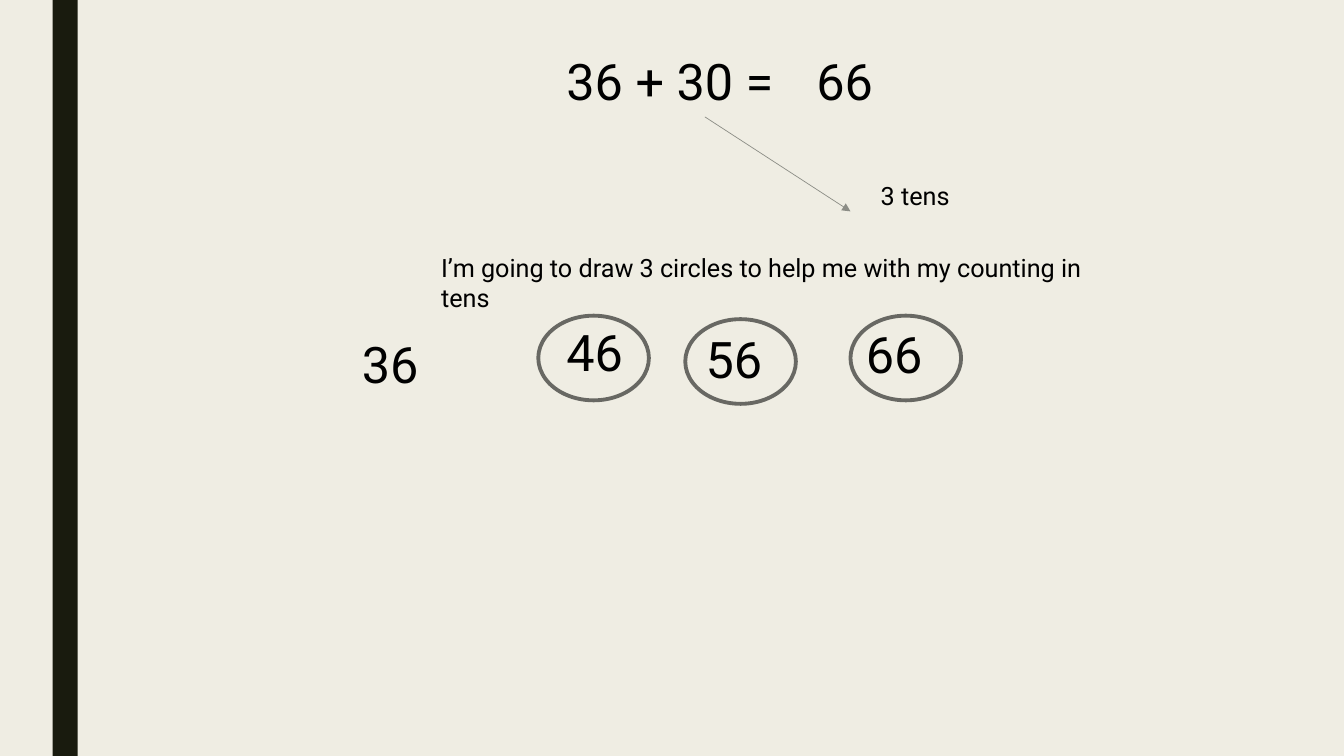
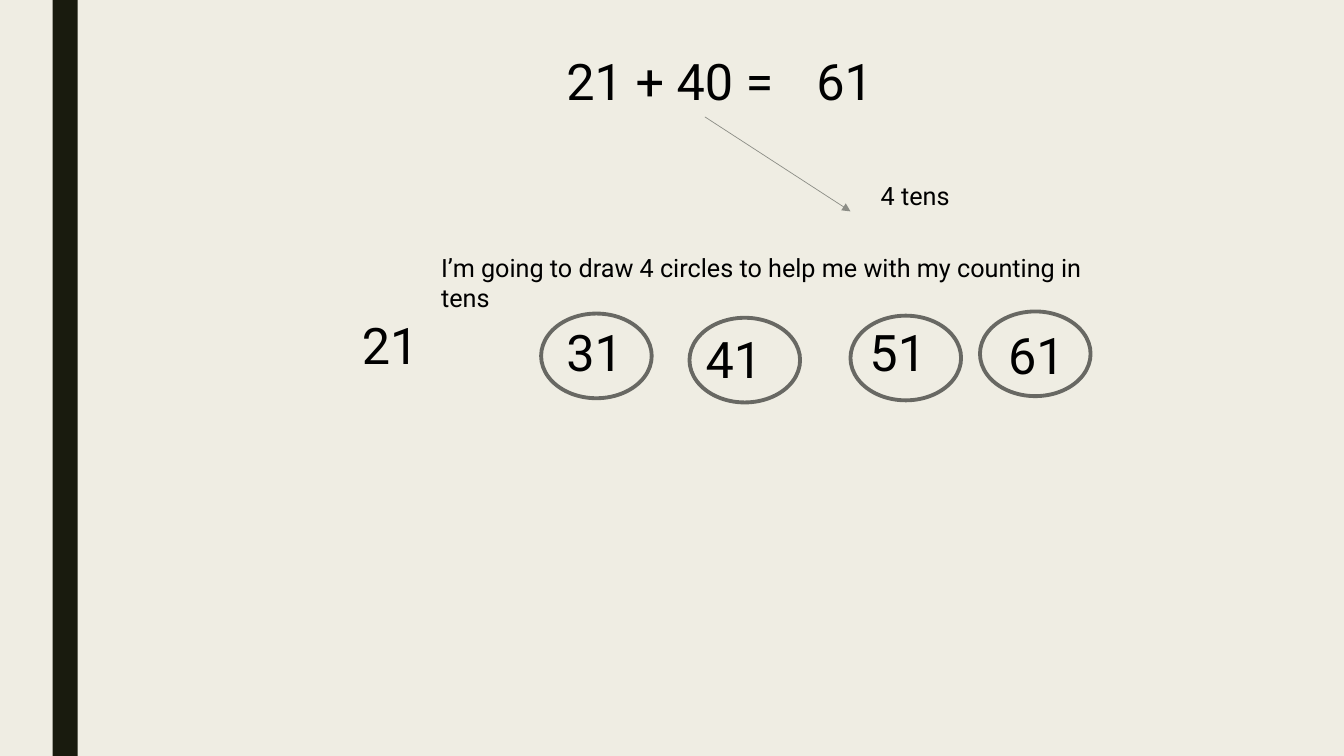
from lxml import etree
from pptx import Presentation
from pptx.dml.color import RGBColor
from pptx.enum import shapes, text
from pptx.oxml import ns
from pptx.util import Pt

COLORS = {"paper": "EFEDE3", "band": "191B0E", "ring": "686863",
          "arrow": "8C8D86", "ink": "000000"}
BIG = {"size": Pt(36), "name": "Roboto"}
SMALL = {"size": Pt(18), "name": "Roboto"}
RING_W, RING_H = 79, 60.5

# Each ring: ring left, ring top, number left, number top
SUMS = [
    {"start": 36, "start_top": 234.5, "rings": [
        (384.5, 225.5, 397.5, 226),
        (489.5, 228, 497, 230.5),
        (607.5, 225.5, 611.5, 227)]},
    {"start": 21, "start_top": 221, "rings": [
        (386.5, 224, 397.5, 226),
        (492.5, 227, 497, 230.5),
        (607.5, 225.5, 614, 225.5),
        (700, 222.5, 713, 228)]},
]


def add_text(s, words, left, top, width, font):
    height = 51 if font is BIG else 29
    tf = s.shapes.add_textbox(Pt(left), Pt(top), Pt(width), Pt(height)).text_frame
    tf.word_wrap = True
    tf.auto_size = text.MSO_AUTO_SIZE.SHAPE_TO_FIT_TEXT
    r = tf.paragraphs[0].add_run()
    r.text = words
    for key, value in font.items():
        setattr(r.font, key, value)
    r.font.color.rgb = RGBColor.from_string(COLORS["ink"])


def add_plain_shape(s, kind, left, top, width, height):
    sp = s.shapes.add_shape(kind, Pt(left), Pt(top), Pt(width), Pt(height))
    sp.shadow.inherit = False
    return sp


prs = Presentation()
prs.slide_width, prs.slide_height = Pt(960), Pt(540)
paper = prs.slide_master.background.fill
paper.solid()
paper.fore_color.rgb = RGBColor.from_string(COLORS["paper"])

for item in SUMS:
    s = prs.slides.add_slide(prs.slide_layouts[6])
    start, rings = item["start"], item["rings"]
    tens = len(rings)

    band = add_plain_shape(s, shapes.MSO_SHAPE.RECTANGLE, 37.5, 0, 18, 540)
    band.fill.solid()
    band.fill.fore_color.rgb = RGBColor.from_string(COLORS["band"])
    band.line.fill.background()

    add_text(s, f"{start} + {tens * 10} =", 397.5, 32.5, 178, BIG)
    add_text(s, str(start + tens * 10), 576, 32.5, 80, BIG)

    arrow = s.shapes.add_connector(shapes.MSO_CONNECTOR.STRAIGHT,
                                   Pt(503.5), Pt(83.5), Pt(607.5), Pt(151))
    arrow.line.width = Pt(0.5)
    arrow.line.color.rgb = RGBColor.from_string(COLORS["arrow"])
    etree.SubElement(arrow.line._get_or_add_ln(), ns.qn("a:tailEnd"), type="triangle")
    etree.SubElement(arrow._element.spPr, ns.qn("a:effectLst"))

    add_text(s, f"{tens} tens", 622, 125.5, 165.5, SMALL)
    add_text(s, f"I’m going to draw {tens} circles to help me with my counting in tens",
             308, 176.5, 507.5, SMALL)

    add_text(s, str(start), 251.5, item["start_top"], 80, BIG)
    for step, (left, top, num_left, num_top) in enumerate(rings, 1):
        ring = add_plain_shape(s, shapes.MSO_SHAPE.OVAL, left, top, RING_W, RING_H)
        ring.fill.background()
        ring.line.width = Pt(2.75)
        ring.line.color.rgb = RGBColor.from_string(COLORS["ring"])
        add_text(s, str(start + step * 10), num_left, num_top, 80, BIG)

prs.save("out.pptx")
